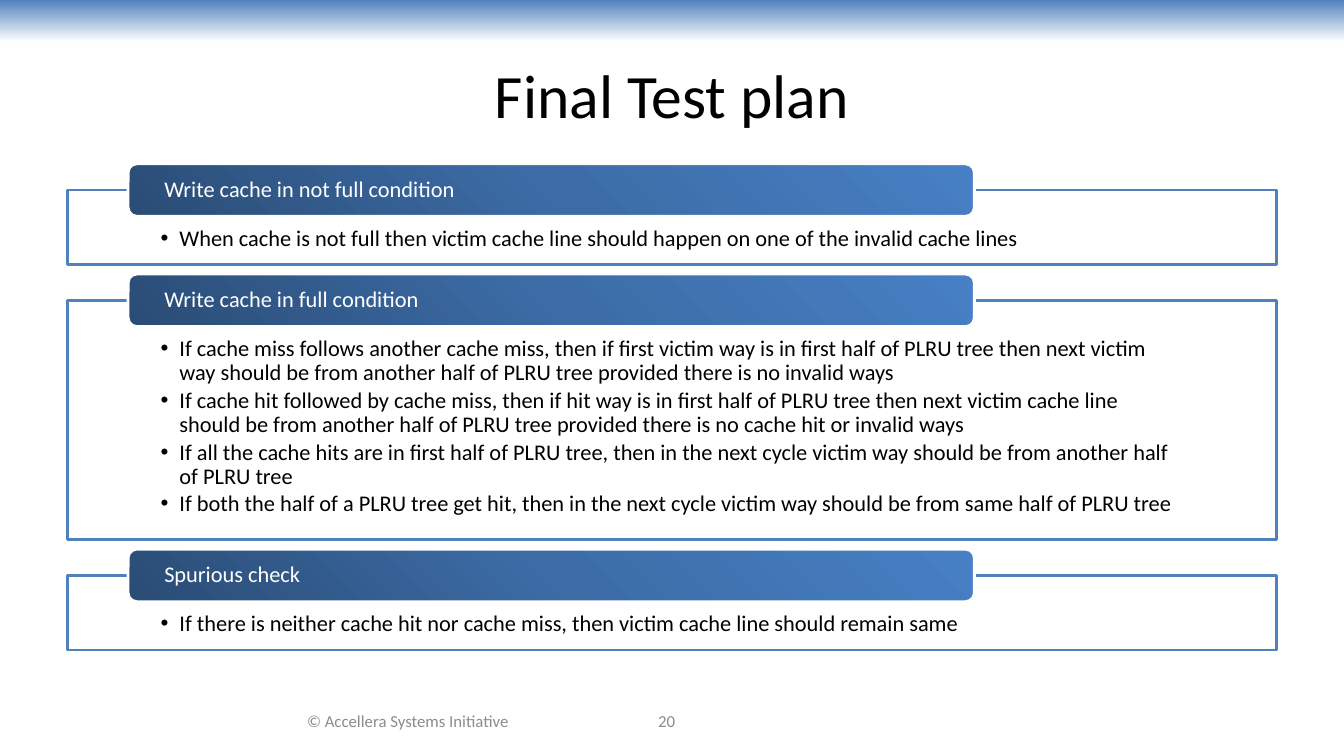
from copy import deepcopy

from lxml.etree import SubElement
from pptx import Presentation
from pptx.dml.color import RGBColor
from pptx.enum.shapes import MSO_SHAPE
from pptx.enum.text import MSO_ANCHOR, PP_ALIGN
from pptx.oxml.ns import qn
from pptx.util import Emu, Pt

EMU_PER_PX = 9525
SLIDE_WIDTH, SLIDE_HEIGHT = 1280, 720

BLACK = RGBColor(0x00, 0x00, 0x00)
WHITE = RGBColor(0xFF, 0xFF, 0xFF)
GREY = RGBColor(0x8C, 0x8C, 0x8C)
BLUE = RGBColor(0x4F, 0x81, 0xBD)
HEADER_BLUES = [RGBColor(0x2A, 0x4C, 0x75), RGBColor(0x3C, 0x6C, 0xA6), RGBColor(0x47, 0x80, 0xC5)]

PANEL_LEFT, PANEL_WIDTH, PANEL_TOP, PANEL_GAP = 64, 1152, 181, 34
HEADER_LEFT, HEADER_WIDTH, HEADER_HEIGHT = 122, 806, 50

# Header, panel height, bullets
SECTIONS = [
    ("Write cache in not full condition", 71, [
        "When cache is not full then victim cache line should happen on one of the invalid cache lines",
    ]),
    ("Write cache in full condition", 228, [
        "If cache miss follows another cache miss, then if first victim way is in first half of PLRU tree "
        "then next victim way should be from another half of PLRU tree provided there is no invalid ways",
        "If cache hit followed by cache miss, then if hit way is in first half of PLRU tree then next victim "
        "cache line should be from another half of PLRU tree provided there is no cache hit or invalid ways",
        "If all the cache hits are in first half of PLRU tree, then in the next cycle victim way should be "
        "from another half of PLRU tree",
        "If both the half of a PLRU tree get hit, then in the next cycle victim way should be from same half "
        "of PLRU tree",
    ]),
    ("Spurious check", 71, [
        "If there is neither cache hit nor cache miss, then victim cache line should remain same",
    ]),
]


def px(length):
    return Emu(length * EMU_PER_PX)


class SlideBuilder:
    font_name = "Calibri"

    def __init__(self, slide):
        self.slide = slide

    def set_text(self, shape, lines, size, color, align=PP_ALIGN.LEFT, anchor=MSO_ANCHOR.MIDDLE,
                 insets=(10, 5, 10, 5), line_spacing=None, bullets=False):
        frame = shape.text_frame
        frame.word_wrap = True
        frame.vertical_anchor = anchor
        frame.margin_left, frame.margin_top, frame.margin_right, frame.margin_bottom = map(px, insets)
        frame.text = "\n".join(lines)
        for paragraph in frame.paragraphs:
            paragraph.alignment = align
            if line_spacing:
                paragraph.line_spacing = line_spacing
            if bullets:
                paragraph.space_after = Pt(2.5)
                properties = paragraph._p.get_or_add_pPr()
                properties.set("marL", str(px(18)))
                properties.set("indent", str(px(-18)))
                SubElement(properties, qn("a:buFont"), typeface="Arial")
                SubElement(properties, qn("a:buChar"), char="•")
            paragraph.font.name = self.font_name
            paragraph.font.size = Pt(size)
            paragraph.font.color.rgb = color

    def box(self, kind, left, top, width, height, line=None):
        shape = self.slide.shapes.add_shape(kind, px(left), px(top), px(width), px(height))
        shape.shadow.inherit = False
        if line is None:
            shape.line.fill.background()
        else:
            shape.line.color.rgb = line
            shape.line.width = Pt(2)
        return shape

    def gradient(self, shape, colors, angle):
        shape.fill.gradient()
        stop_list = shape.element.spPr.find(".//" + qn("a:gsLst"))
        while len(stop_list) < len(colors):
            stop_list.append(deepcopy(stop_list[0]))
        for index, (stop, color) in enumerate(zip(shape.fill.gradient_stops, colors)):
            stop.position = index / (len(colors) - 1)
            stop.color.rgb = color
        shape.fill.gradient_angle = angle

    def title(self, text, left, top, width, height):
        shape = self.slide.shapes.title
        shape.left, shape.top, shape.width, shape.height = map(px, (left, top, width, height))
        self.set_text(shape, [text], 44, BLACK, PP_ALIGN.CENTER)

    def footer(self, text, left, width):
        shape = self.slide.shapes.add_textbox(px(left), px(667), px(width), px(38))
        self.set_text(shape, [text], 12, GREY, PP_ALIGN.CENTER)

    def panel(self, top, height, bullets):
        shape = self.box(MSO_SHAPE.RECTANGLE, PANEL_LEFT, top, PANEL_WIDTH, height, BLUE)
        shape.fill.solid()
        shape.fill.fore_color.rgb = WHITE
        self.set_text(shape, bullets, 16, BLACK, anchor=MSO_ANCHOR.TOP,
                      insets=(89, 35, 89, 12), line_spacing=0.9, bullets=True)

    def header(self, text, middle):
        shape = self.box(MSO_SHAPE.ROUNDED_RECTANGLE, HEADER_LEFT, middle - HEADER_HEIGHT // 2,
                         HEADER_WIDTH, HEADER_HEIGHT, WHITE)
        self.gradient(shape, HEADER_BLUES, 45)
        self.set_text(shape, [text], 16, WHITE, insets=(32, 0, 32, 0), line_spacing=0.9)


def main():
    presentation = Presentation()
    presentation.slide_width, presentation.slide_height = px(SLIDE_WIDTH), px(SLIDE_HEIGHT)
    builder = SlideBuilder(presentation.slides.add_slide(presentation.slide_layouts[5]))

    # Top band and title
    band = builder.box(MSO_SHAPE.RECTANGLE, 0, 0, SLIDE_WIDTH, 40)
    builder.gradient(band, [BLUE, WHITE], 270)
    builder.title("Final Test plan", 64, 29, 1152, 120)

    # Test plan sections
    top = PANEL_TOP
    for heading, height, bullets in SECTIONS:
        builder.panel(top, height, bullets)
        builder.header(heading, top)
        top += height + PANEL_GAP

    # Footer
    builder.footer("© Accellera Systems Initiative", 234, 309)
    builder.footer("20", 512, 246)

    presentation.save("out.pptx")


if __name__ == "__main__":
    main()
